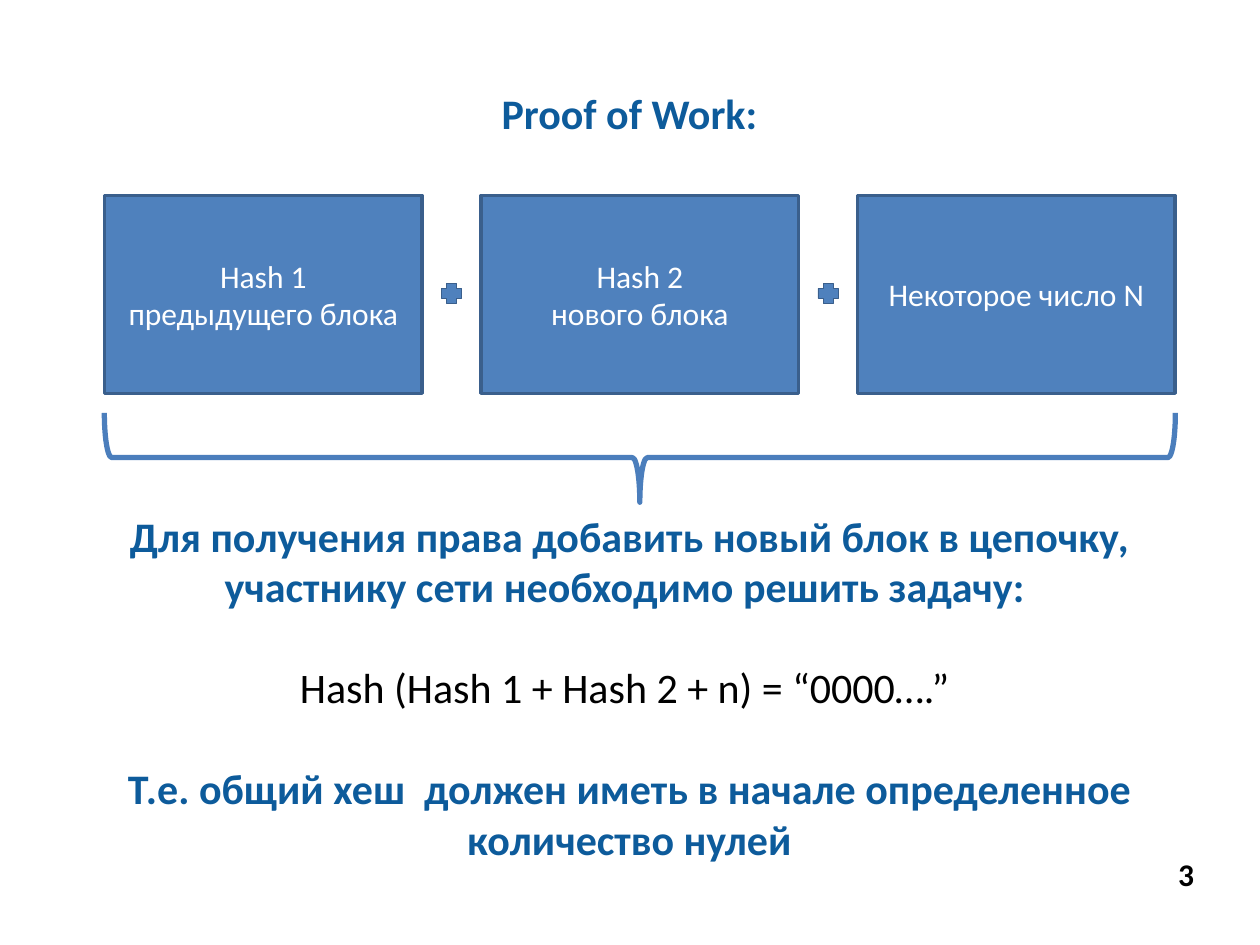
"""Build the Proof of Work slide: three summed blocks, a brace and the task."""
import pptx
import pptx.util
import pptx.dml.color
import pptx.enum.shapes
import pptx.enum.text

Cm, Pt = pptx.util.Cm, pptx.util.Pt
RGBColor = pptx.dml.color.RGBColor
SHAPE = pptx.enum.shapes.MSO_SHAPE
ALIGN = pptx.enum.text.PP_ALIGN
ANCHOR = pptx.enum.text.MSO_ANCHOR

HEADING = RGBColor(0x0D, 0x5B, 0x9B)
BLOCK = RGBColor(0x4F, 0x81, 0xBD)
BORDER = RGBColor(0x3A, 0x5F, 0x8C)
BRACE = RGBColor(0x4B, 0x7E, 0xBC)
WHITE = RGBColor(0xFF, 0xFF, 0xFF)
BLACK = RGBColor(0, 0, 0)


def write(tf, text, size=24, color=HEADING, bold=True, align=ALIGN.CENTER, before=0):
    p = tf.paragraphs[0]
    if p.runs:
        p = tf.add_paragraph()
    p.alignment = align
    p.space_before = Pt(before)
    r = p.add_run()
    r.text = text
    r.font.name = "Calibri"
    r.font.size = Pt(size)
    r.font.bold = bold
    r.font.color.rgb = color


def add_shape(kind, left, top, width, height, line, weight, fill=None):
    sp = s.shapes.add_shape(kind, Cm(left), Cm(top), Cm(width), Cm(height))
    sp.shadow.inherit = False
    if fill is None:
        sp.fill.background()
    else:
        sp.fill.solid()
        sp.fill.fore_color.rgb = fill
    sp.line.color.rgb = line
    sp.line.width = Pt(weight)
    return sp


prs = pptx.Presentation()
prs.slide_width, prs.slide_height = Cm(25.4), Cm(19.05)
s = prs.slides.add_slide(prs.slide_layouts[6])

title = s.shapes.add_textbox(Cm(0.89), Cm(1.63), Cm(23.6), Cm(1.27)).text_frame
title.word_wrap = True
title.vertical_anchor = ANCHOR.MIDDLE
write(title, "Proof of Work:")

number = s.shapes.add_textbox(Cm(23.5), Cm(17.12), Cm(0.86), Cm(1.02)).text_frame
number.word_wrap = False
write(number, "3", size=18, color=BLACK, align=ALIGN.LEFT)

blocks = [
    ["Hash 1", "предыдущего блока"],
    ["Hash 2", "нового блока"],
    ["Некоторое число N"],
]
pitch = 7.59
for i, lines in enumerate(blocks):
    sp = add_shape(SHAPE.RECTANGLE, 2.11 + i * pitch, 3.94, 6.4, 3.99, BORDER, 2, BLOCK)
    tf = sp.text_frame
    tf.word_wrap = True
    tf.vertical_anchor = ANCHOR.MIDDLE
    for line in lines:
        write(tf, line, size=18, color=WHITE, bold=False)

for i in range(len(blocks) - 1):
    add_shape(SHAPE.CROSS, 8.9 + i * pitch, 5.71, 0.41, 0.41, BORDER, 0.5, BLOCK)

brace = add_shape(SHAPE.LEFT_BRACE, 12, -1.57, 1.8, 21.59, BRACE, 3)
brace.rotation = 270

task = s.shapes.add_textbox(Cm(0.89), Cm(10.13), Cm(23.6), Cm(7.44)).text_frame
task.word_wrap = True
task.vertical_anchor = ANCHOR.MIDDLE
write(task, "Для получения права добавить новый блок в цепочку, "
            "участнику сети необходимо решить задачу: ")
write(task, "Hash (Hash 1 + Hash 2 + n) = “0000….” ", color=BLACK, bold=False, before=29)
write(task, "Т.е. общий хеш  должен иметь в начале определенное количество нулей", before=29)

prs.save("out.pptx")
